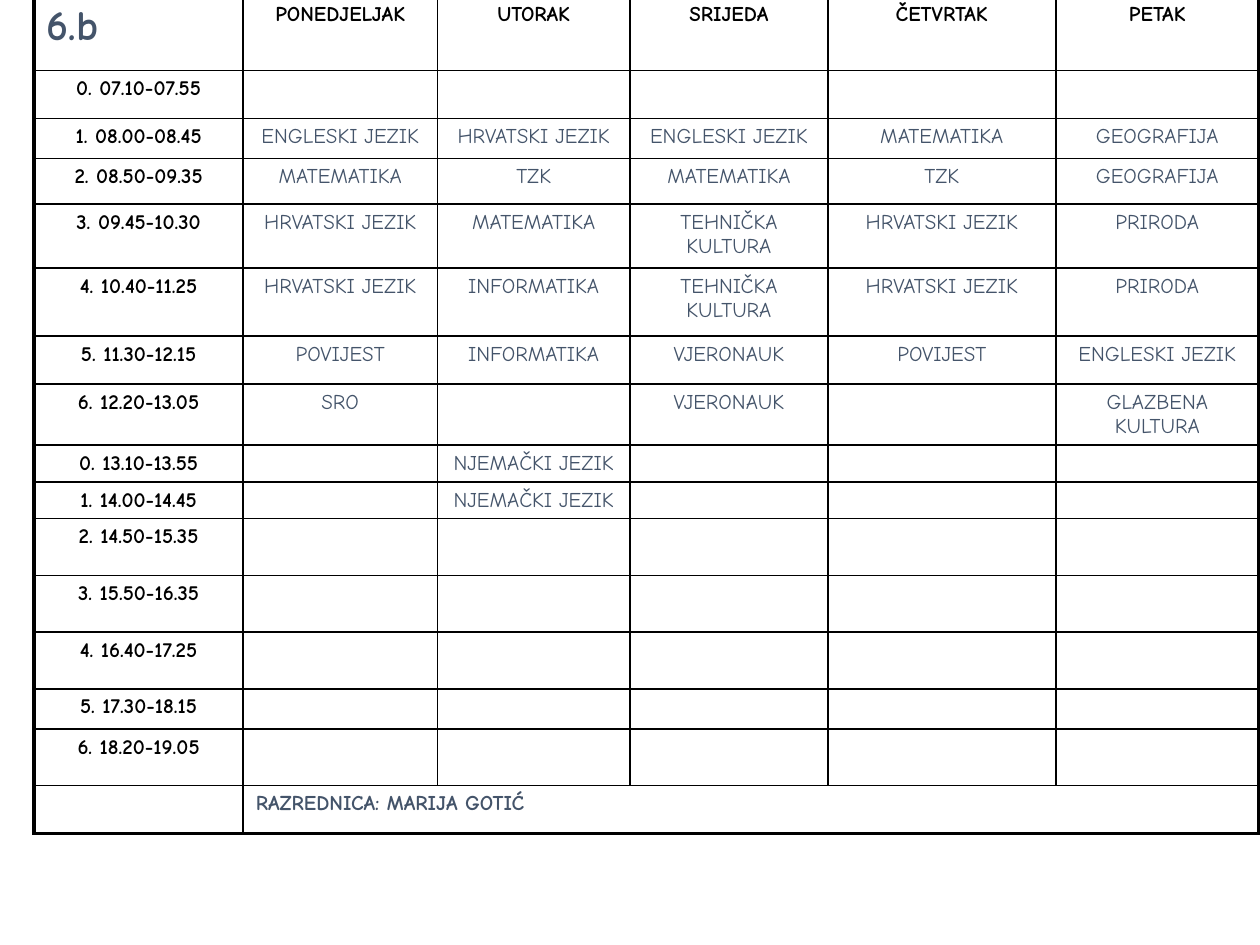
from lxml import etree
from pptx import Presentation
from pptx.dml.color import RGBColor
from pptx.enum.text import PP_ALIGN
from pptx.oxml.ns import qn
from pptx.util import Pt

LEFT, MID = PP_ALIGN.LEFT, PP_ALIGN.CENTER
BLACK = RGBColor(0x00, 0x00, 0x00)
SLATE = RGBColor(0x44, 0x54, 0x6A)
FACE = "Comic Neue"
THIN, THICK = 1, 2.25

DAYS = ["6.b", "PONEDJELJAK", "UTORAK", "SRIJEDA", "ČETVRTAK", "PETAK"]
HOURS = [
    ["0. 07.10-07.55"],
    ["1. 08.00-08.45", "ENGLESKI JEZIK", "HRVATSKI JEZIK", "ENGLESKI JEZIK",
     "MATEMATIKA", "GEOGRAFIJA"],
    ["2. 08.50-09.35", "MATEMATIKA", "TZK", "MATEMATIKA", "TZK", "GEOGRAFIJA"],
    ["3. 09.45-10.30", "HRVATSKI JEZIK", "MATEMATIKA", "TEHNIČKA KULTURA",
     "HRVATSKI JEZIK", "PRIRODA"],
    ["4. 10.40-11.25", "HRVATSKI JEZIK", "INFORMATIKA", "TEHNIČKA KULTURA",
     "HRVATSKI JEZIK", "PRIRODA"],
    ["5. 11.30-12.15", "POVIJEST", "INFORMATIKA", "VJERONAUK", "POVIJEST",
     "ENGLESKI JEZIK"],
    ["6. 12.20-13.05", "SRO", "", "VJERONAUK", "", "GLAZBENA KULTURA"],
    ["0. 13.10-13.55", "", "NJEMAČKI JEZIK"],
    ["1. 14.00-14.45", "", "NJEMAČKI JEZIK"],
    ["2. 14.50-15.35"],
    ["3. 15.50-16.35"],
    ["4. 16.40-17.25"],
    ["5. 17.30-18.15"],
    ["6. 18.20-19.05"],
]
TUTOR = ["", "RAZREDNICA: MARIJA GOTIĆ"]
ROWS = [DAYS, *HOURS, TUTOR]
WIDTHS = [119.5, 110.9, 110.2, 113, 130.3, 116]
HEIGHTS = [42.5, 27.4, 23, 25.9, 36.7, 38.9, 27.4, 33.1,
           12.2, 18.7, 32.4, 32.4, 32.4, 23, 32.4, 27.4]
LAST_ROW, LAST_COL = len(ROWS) - 1, len(WIDTHS) - 1


def look(row, col):
    style = {"size": Pt(12), "name": FACE, "bold": True}
    if row == col == 0:
        return {**style, "size": Pt(24)}, SLATE, LEFT
    if row == LAST_ROW:
        return style, SLATE, LEFT
    if row == 0 or col == 0:
        return style, BLACK, MID
    return {**style, "bold": False}, SLATE, MID


def write(cell, text, row, col):
    style, color, align = look(row, col)
    para = cell.text_frame.paragraphs[0]
    para.alignment = align
    if not text:
        end = etree.SubElement(para._p, qn("a:endParaRPr"), sz="1200")
        etree.SubElement(end, qn("a:latin"), typeface=FACE)
        return
    run = para.add_run()
    run.text = text
    for key, value in style.items():
        setattr(run.font, key, value)
    run.font.color.rgb = color


def edge(cell, row, col):
    outer = {"L": col == 0, "R": col == LAST_COL or (row == LAST_ROW and col > 0),
             "T": row == 0, "B": row == LAST_ROW}
    props = cell._tc.get_or_add_tcPr()
    for spot, (side, thick) in enumerate(outer.items()):
        line = etree.Element(qn("a:ln" + side), w=str(Pt(THICK if thick else THIN)))
        fill = etree.SubElement(line, qn("a:solidFill"))
        etree.SubElement(fill, qn("a:srgbClr"), val=str(BLACK))
        props.insert(spot, line)


deck = Presentation()
deck.slide_width, deck.slide_height = Pt(720), Pt(540)
slide = deck.slides.add_slide(deck.slide_layouts[6])
frame = slide.shapes.add_table(len(ROWS), len(WIDTHS), Pt(19.5), Pt(-2.2),
                               Pt(sum(WIDTHS)), Pt(sum(HEIGHTS)))
table = frame.table
table.first_row = table.horz_banding = False
for part, width in zip(table.columns, WIDTHS):
    part.width = Pt(width)
for part, height in zip(table.rows, HEIGHTS):
    part.height = Pt(height)
frame.height = Pt(532)
table.cell(LAST_ROW, 1).merge(table.cell(LAST_ROW, LAST_COL))

for row, texts in enumerate(ROWS):
    for col in range(len(WIDTHS)):
        cell = table.cell(row, col)
        cell.fill.background()
        write(cell, texts[col] if col < len(texts) else "", row, col)
        edge(cell, row, col)

deck.save("out.pptx")
